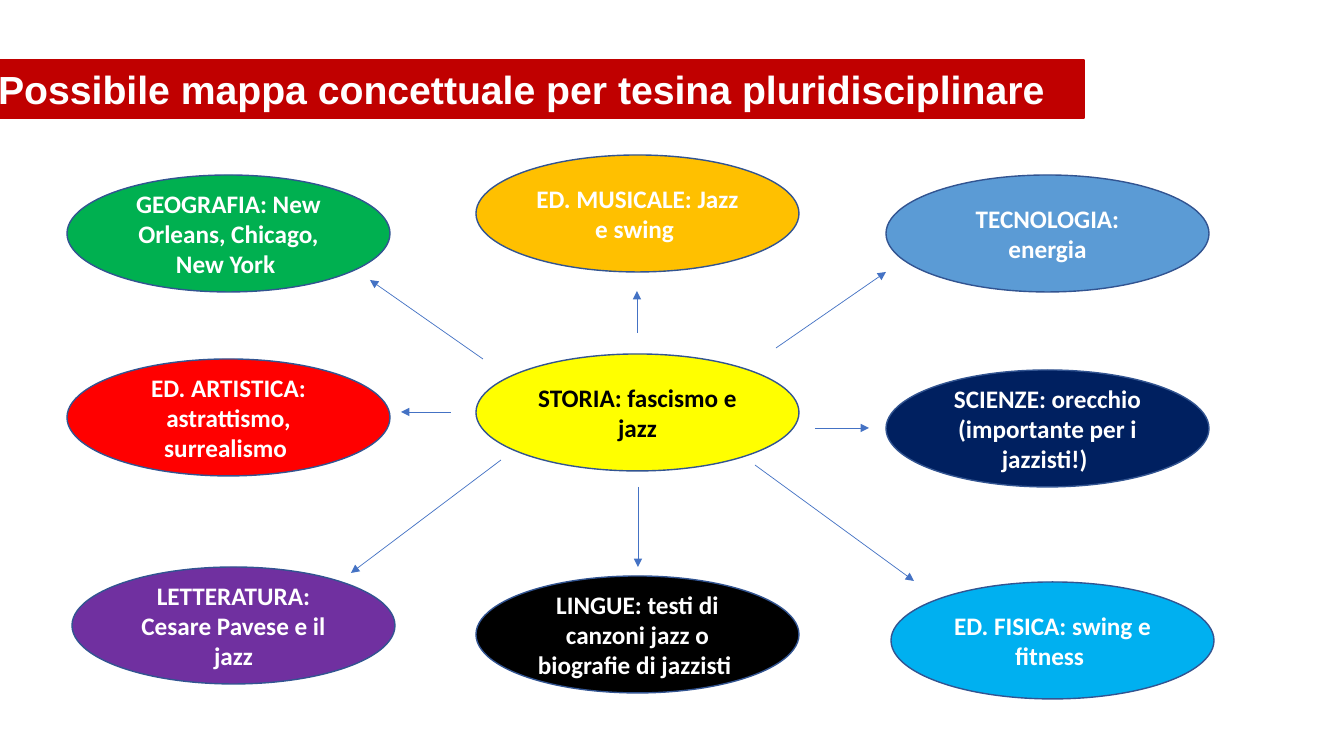
import pptx
import pptx.util
import pptx.dml.color
import pptx.enum.shapes
import pptx.enum.text
import pptx.oxml
import pptx.oxml.ns

RGBColor = pptx.dml.color.RGBColor
WHITE = RGBColor(0xFF, 0xFF, 0xFF)
BLACK = RGBColor(0x00, 0x00, 0x00)
YELLOW = RGBColor(0xFF, 0xFF, 0x00)
AMBER = RGBColor(0xFF, 0xC0, 0x00)
STEEL = RGBColor(0x5B, 0x9B, 0xD5)
NAVY = RGBColor(0x00, 0x20, 0x60)
SKY = RGBColor(0x00, 0xB0, 0xF0)
PURPLE = RGBColor(0x70, 0x30, 0xA0)
RED = RGBColor(0xFF, 0x00, 0x00)
GREEN = RGBColor(0x00, 0xB0, 0x50)
CRIMSON = RGBColor(0xC0, 0x00, 0x00)
OUTLINE = RGBColor(0x32, 0x54, 0x91)
ARROW = RGBColor(0x44, 0x72, 0xC4)

SLIDE_WIDTH, SLIDE_HEIGHT = 1344, 756
OVAL_WIDTH, OVAL_HEIGHT = 323, 117
LEFT, CENTRE, RIGHT = 67, 476, 886


def px(length):
    return round(length * 914400 / 100.8)


def xml(tag, attributes="", content=""):
    namespace = pptx.oxml.ns.nsdecls("a")
    return pptx.oxml.parse_xml(f"<a:{tag} {namespace} {attributes}>{content}</a:{tag}>")


class ConceptMap:
    """Style and current slide of the map."""

    def __init__(self, slide):
        self.slide = slide

    def paint(self, shape, fill, outline):
        shape.fill.solid()
        shape.fill.fore_color.rgb = fill
        shape.line.color.rgb = outline
        shape.line.width = pptx.util.Pt(1)

    def label(self, shape, text, font_name, size, color, align):
        frame = shape.text_frame
        frame.text = text
        frame.word_wrap = True
        frame.auto_size = pptx.enum.text.MSO_AUTO_SIZE.NONE
        frame.vertical_anchor = pptx.enum.text.MSO_ANCHOR.MIDDLE
        for paragraph in frame.paragraphs:
            paragraph.alignment = align
            paragraph.font.name = font_name
            paragraph.font.size = pptx.util.Pt(size)
            paragraph.font.bold = True
            paragraph.font.color.rgb = color

    def title(self, text, left, top, width, height):
        banner = self.slide.shapes.title
        banner.left, banner.top = px(left), px(top)
        banner.width, banner.height = px(width), px(height)
        banner.element.spPr.append(xml("prstGeom", 'prst="roundRect"', "<a:avLst/>"))
        self.paint(banner, CRIMSON, CRIMSON)
        self.label(banner, text, "Arial", 28, WHITE, pptx.enum.text.PP_ALIGN.LEFT)

    def subject(self, text, left, top, fill, color=WHITE):
        oval = self.slide.shapes.add_shape(
            pptx.enum.shapes.MSO_SHAPE.OVAL,
            px(left), px(top), px(OVAL_WIDTH), px(OVAL_HEIGHT))
        oval.shadow.inherit = False
        self.paint(oval, fill, OUTLINE)
        self.label(oval, text, "Calibri", 18, color, pptx.enum.text.PP_ALIGN.CENTER)

    def arrow(self, start_x, start_y, end_x, end_y):
        link = self.slide.shapes.add_connector(
            pptx.enum.shapes.MSO_CONNECTOR.STRAIGHT,
            px(start_x), px(start_y), px(end_x), px(end_y))
        link.line.color.rgb = ARROW
        link.line.width = pptx.util.Pt(0.5)
        outline = link.element.spPr.find(pptx.oxml.ns.qn("a:ln"))
        outline.append(xml("tailEnd", 'type="triangle"'))
        link.element.spPr.append(xml("effectLst"))


SUBJECTS = [
    ("ED. MUSICALE: Jazz e swing ", CENTRE, 155, AMBER),
    ("LINGUE: testi di canzoni jazz o biografie di jazzisti ", CENTRE, 576, BLACK),
    ("TECNOLOGIA: energia", RIGHT, 175, STEEL),
    ("SCIENZE: orecchio\n(importante per i jazzisti!) ", RIGHT, 370, NAVY),
    ("ED. FISICA: swing e fitness ", RIGHT + 5, 582, SKY),
    ("LETTERATURA: Cesare Pavese e il jazz", LEFT + 5, 567, PURPLE),
    ("ED. ARTISTICA: astrattismo, surrealismo ", LEFT, 359, RED),
    ("GEOGRAFIA: New Orleans, Chicago, New York ", LEFT, 175, GREEN),
]

# Arrows from the central topic, clockwise from the top
ARROWS = [
    (637, 333, 637, 291),
    (776, 348, 886, 272),
    (815, 428, 869, 428),
    (755, 465, 914, 581),
    (638, 487, 638, 567),
    (501, 460, 351, 573),
    (451, 412, 401, 412),
    (483, 359, 370, 280),
]


def main():
    deck = pptx.Presentation()
    deck.slide_width, deck.slide_height = px(SLIDE_WIDTH), px(SLIDE_HEIGHT)
    concept_map = ConceptMap(deck.slides.add_slide(deck.slide_layouts[5]))

    # Title banner, running in from the left edge
    concept_map.title("Possibile mappa concettuale per tesina pluridisciplinare",
                      -12, 60, 1096, 58)

    # Central topic and the subjects around it
    concept_map.subject("STORIA: fascismo e jazz", CENTRE, 354, YELLOW, BLACK)
    for subject in SUBJECTS:
        concept_map.subject(*subject)

    # Links from the topic to the subjects
    for ends in ARROWS:
        concept_map.arrow(*ends)

    deck.save("out.pptx")


if __name__ == "__main__":
    main()
